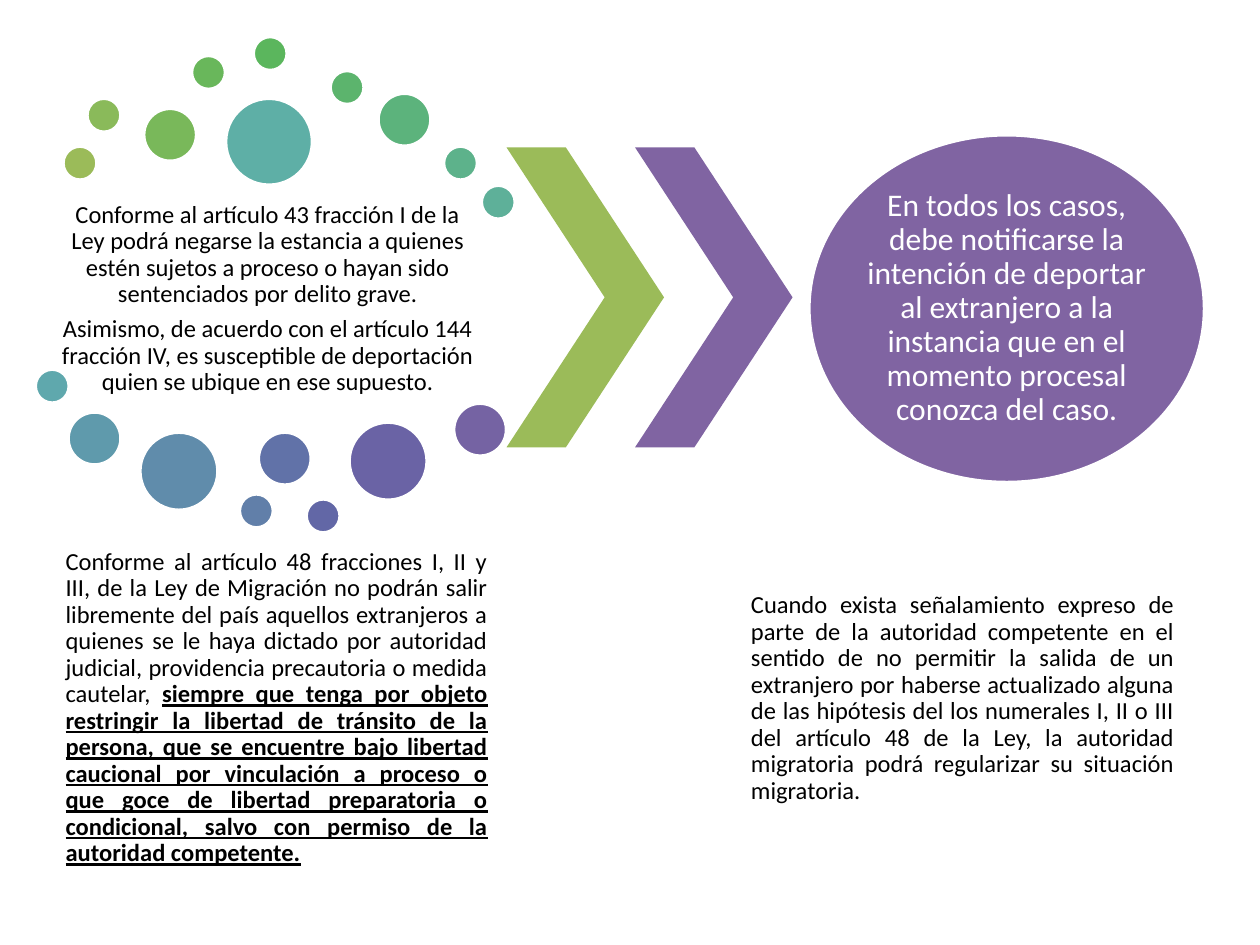
from dataclasses import dataclass

from pptx import Presentation
from pptx.dml.color import RGBColor
from pptx.enum.shapes import MSO_SHAPE
from pptx.enum.text import MSO_ANCHOR, PP_ALIGN
from pptx.util import Inches, Pt


@dataclass(frozen=True)
class Theme:
    font: str = "Calibri"
    body: int = 14
    callout: int = 18
    text: str = "000000"
    white: str = "FFFFFF"
    green: str = "9BBB59"
    purple: str = "8064A2"
    outline: int = 2
    line_spacing: float = 0.9
    space_after: float = 0.35  # share of the type size


THEME = Theme()

# Dot diameters in inches
SMALL, MEDIUM, LARGE, HUGE = 0.27, 0.42, 0.62, 0.69

# Left, top, diameter, colour
DOTS_ABOVE = [
    (0.50, 1.16, SMALL, "9BBB59"),
    (0.69, 0.78, SMALL, "8ABA5A"),
    (1.14, 0.86, MEDIUM, "79B85A"),
    (1.52, 0.44, SMALL, "69B75B"),
    (2.01, 0.29, SMALL, "5BB65D"),
    (2.62, 0.56, SMALL, "5CB46D"),
    (3.00, 0.74, MEDIUM, "5CB37C"),
    (3.52, 1.16, SMALL, "5DB28B"),
    (3.82, 1.47, SMALL, "5EB099"),
    (1.79, 0.78, HUGE, "5EAFA6"),
]
DOTS_BELOW = [
    (0.28, 2.93, SMALL, "5FA8AD"),
    (0.54, 3.27, MEDIUM, "5F9AAC"),
    (1.11, 3.43, LARGE, "608CAB"),
    (1.90, 3.92, SMALL, "617FA9"),
    (2.05, 3.43, MEDIUM, "6172A8"),
    (2.43, 3.96, SMALL, "6267A6"),
    (2.77, 3.35, LARGE, "6A63A5"),
    (3.60, 3.20, MEDIUM, "7563A3"),
]

# Each text is a list of paragraphs; each paragraph a list of (words, stressed)
GRAVE_CRIME = [
    [("Conforme al artículo 43 fracción I de la Ley podrá negarse la estancia a "
      "quienes estén sujetos a proceso o hayan sido sentenciados por delito grave.", False)],
    [("Asimismo, de acuerdo con el artículo 144 fracción IV, es susceptible de "
      "deportación quien se ubique en ese supuesto.", False)],
]
EXIT_LIMITS = [[
    ("Conforme al artículo 48 fracciones I, II y III, de la Ley de Migración no podrán "
     "salir libremente del país aquellos extranjeros a quienes se le haya dictado por "
     "autoridad judicial, providencia precautoria o medida cautelar, ", False),
    ("siempre que tenga por objeto restringir la libertad de tránsito de la persona, que "
     "se encuentre bajo libertad caucional por vinculación a proceso o que goce de "
     "libertad preparatoria o condicional, salvo con permiso de la autoridad "
     "competente.", True),
]]
NOTIFICATION = [[
    ("En todos los casos, debe notificarse la intención de deportar al extranjero a la "
     "instancia que en el momento procesal conozca del caso.", False),
]]
REGULARIZATION = [[
    ("Cuando exista señalamiento expreso de parte de la autoridad competente en el "
     "sentido de no permitir la salida de un extranjero por haberse actualizado alguna "
     "de las hipótesis del los numerales I, II o III del artículo 48 de la Ley, la "
     "autoridad migratoria podrá regularizar su situación migratoria.", False),
]]


def write_text(sp, paragraphs, size=THEME.body, color=THEME.text,
               align=PP_ALIGN.CENTER, inset=0.02):
    tf = sp.text_frame
    tf.word_wrap = True
    tf.vertical_anchor = MSO_ANCHOR.MIDDLE
    tf.margin_left = tf.margin_right = tf.margin_top = tf.margin_bottom = Inches(inset)
    for i, runs in enumerate(paragraphs):
        p = tf.add_paragraph() if i else tf.paragraphs[0]
        p.alignment = align
        p.line_spacing = THEME.line_spacing
        p.space_after = Pt(size * THEME.space_after)
        for words, stressed in runs:
            r = p.add_run()
            r.text = words
            r.font.name = THEME.font
            r.font.size = Pt(size)
            r.font.color.rgb = RGBColor.from_string(color)
            if stressed:
                r.font.bold = r.font.underline = True


def add_text(slide, box, paragraphs, **text_format):
    sp = slide.shapes.add_textbox(*map(Inches, box))
    write_text(sp, paragraphs, **text_format)


def add_filled(slide, kind, box, color):
    sp = slide.shapes.add_shape(kind, *map(Inches, box))
    sp.shadow.inherit = False
    sp.fill.solid()
    sp.fill.fore_color.rgb = RGBColor.from_string(color)
    sp.line.fill.background()
    return sp


def add_ellipse(slide, box, color):
    sp = add_filled(slide, MSO_SHAPE.OVAL, box, color)
    sp.line.color.rgb = RGBColor.from_string(THEME.white)
    sp.line.width = Pt(THEME.outline)
    return sp


def add_chevrons(slide, left, top, step, colors):
    for i, color in enumerate(colors):
        sp = add_filled(slide, MSO_SHAPE.CHEVRON, (left + i * step, top, 1.25, 2.38), color)
        sp.adjustments[0] = 0.623


def main():
    prs = Presentation()
    prs.slide_width, prs.slide_height = Inches(10), Inches(7.5)
    slide = prs.slides.add_slide(prs.slide_layouts[6])

    # Left column: legal grounds, ringed by dots
    add_text(slide, (0.43, 1.55, 3.39, 1.65), GRAVE_CRIME)
    add_text(slide, (0.5, 4.14, 3.39, 2.96), EXIT_LIMITS, align=PP_ALIGN.JUSTIFY)
    for left, top, size, color in DOTS_ABOVE + DOTS_BELOW:
        add_ellipse(slide, (left, top, size, size), color)

    # Middle: chevrons leading to the outcome
    add_chevrons(slide, 4.02, 1.17, 1.02, (THEME.green, THEME.purple))

    # Right column: outcome and explanation
    outcome = add_ellipse(slide, (6.42, 1.07, 3.14, 2.76), THEME.purple)
    write_text(outcome, NOTIFICATION, size=THEME.callout, color=THEME.white, inset=0)
    add_text(slide, (5.94, 3.88, 3.4, 3.33), REGULARIZATION, align=PP_ALIGN.JUSTIFY)

    prs.save("out.pptx")


if __name__ == "__main__":
    main()
